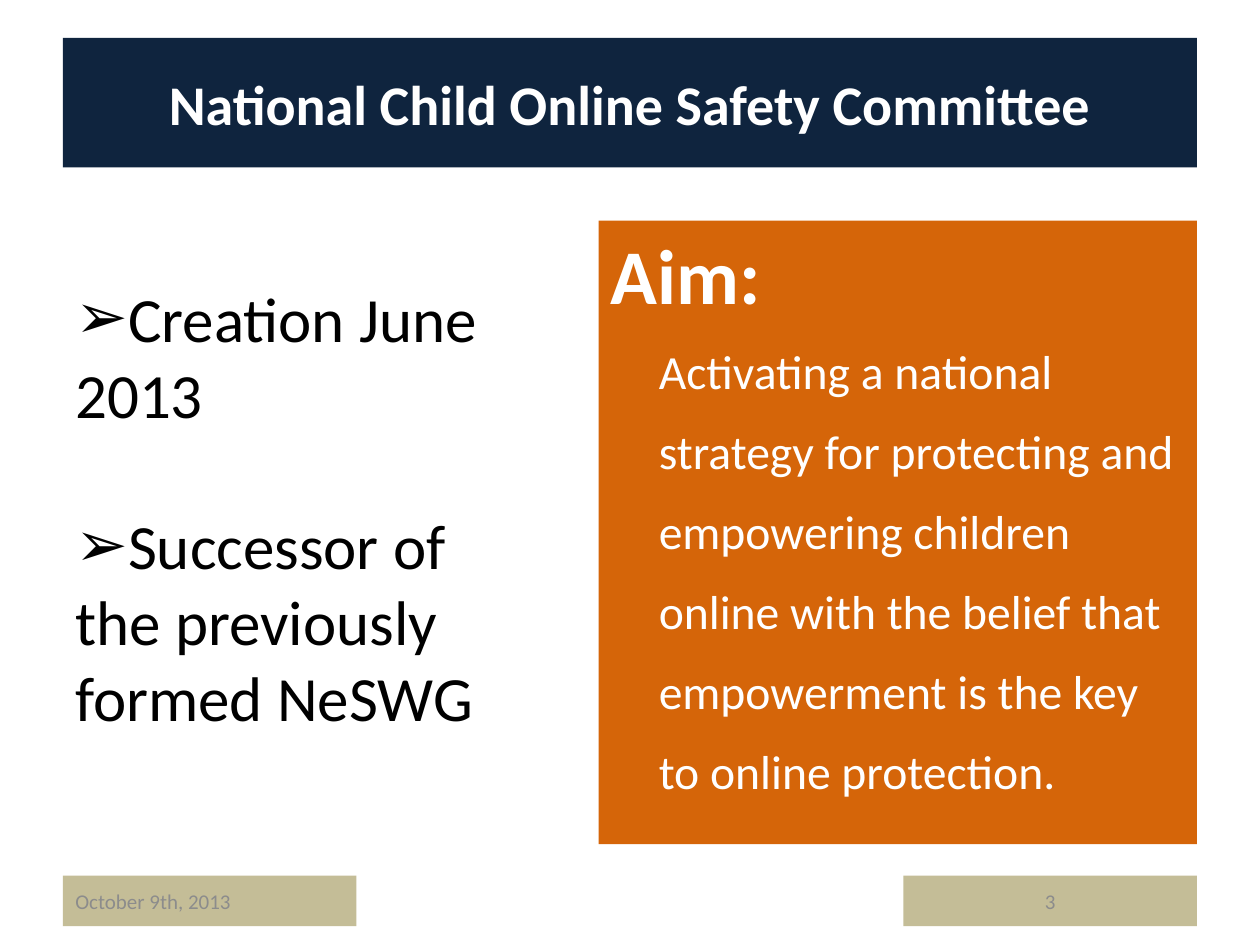
from lxml.etree import SubElement
from pptx import Presentation
from pptx.dml.color import RGBColor
from pptx.enum.shapes import MSO_SHAPE
from pptx.enum.text import MSO_ANCHOR, PP_ALIGN
from pptx.oxml.ns import qn
from pptx.util import Inches, Pt

HUES = {
    "navy": "0F243E", "orange": "D56509", "sand": "C4BD97",
    "white": "FFFFFF", "black": "000000", "gray": "8C8C8C",
}

deck = Presentation()
deck.slide_width, deck.slide_height = Inches(10), Inches(7.5)
slide = deck.slides.add_slide(deck.slide_layouts[6])

# Page frame: equal side margins, footer boxes share one row
edge = 0.5
wide = 10 - 2 * edge
half = 4.75
foot_w, foot_y, foot_h = 2.33, 6.95, 0.4


def panel(left, top, width, height, fill=None, anchor=MSO_ANCHOR.MIDDLE):
    """Add a rectangle and return its text frame."""
    box = slide.shapes.add_shape(
        MSO_SHAPE.RECTANGLE, *map(Inches, (left, top, width, height)))
    box.shadow.inherit = False
    box.line.fill.background()
    if fill:
        box.fill.solid()
        box.fill.fore_color.rgb = RGBColor.from_string(HUES[fill])
    else:
        box.fill.background()
    frame = box.text_frame
    frame.word_wrap = True
    frame.vertical_anchor = anchor
    return frame


def write(frame, text, size, hue, bold=False, align=PP_ALIGN.LEFT,
          line=1, before=0, indent=0, bullet=None):
    """Write one paragraph, filling the empty first one if there is one."""
    para = frame.paragraphs[0] if not frame.text else frame.add_paragraph()
    para.alignment = align
    para.line_spacing = line
    para.space_before = Pt(before)
    props = para._p.get_or_add_pPr()
    props.set("marL", str(Inches(indent)))
    props.set("indent", "0")
    if bullet:
        SubElement(props, qn("a:buFont")).set("typeface", "Calibri")
        SubElement(props, qn("a:buChar")).set("char", bullet)
    run = para.add_run()
    run.text = text
    run.font.name = "Calibri"
    run.font.size = Pt(size)
    run.font.bold = bold
    run.font.color.rgb = RGBColor.from_string(HUES[hue])


# Title band
title = panel(edge, 0.3, wide, 1.03, "navy")
write(title, "National Child Online Safety Committee", 32, "white",
      bold=True, align=PP_ALIGN.CENTER)

# Aim panel, flush with the right margin
aim = panel(10 - edge - half, 1.75, half, 4.95, "orange", MSO_ANCHOR.TOP)
write(aim, "Aim:", 44.2, "white", bold=True)
write(aim, "Activating a national strategy for protecting and empowering "
      "children online with the belief that empowerment is the key to "
      "online protection.", 27.2, "white", line=1.4, indent=0.38)

# Facts on the left, one line apart
facts = panel(edge, 2.17, 3.83, 3.74, anchor=MSO_ANCHOR.TOP)
for text, gap in (("Creation June 2013", 0),
                  ("Successor of the previously formed NeSWG", 43.5)):
    write(facts, text, 36, "black", before=gap, bullet="➢")

# Footer
for left, text, align in (
        (edge, "October 9th, 2013", PP_ALIGN.LEFT),
        (10 - edge - foot_w, "3", PP_ALIGN.CENTER)):
    foot = panel(left, foot_y, foot_w, foot_h, "sand")
    write(foot, text, 12, "gray", align=align)

deck.save("out.pptx")
